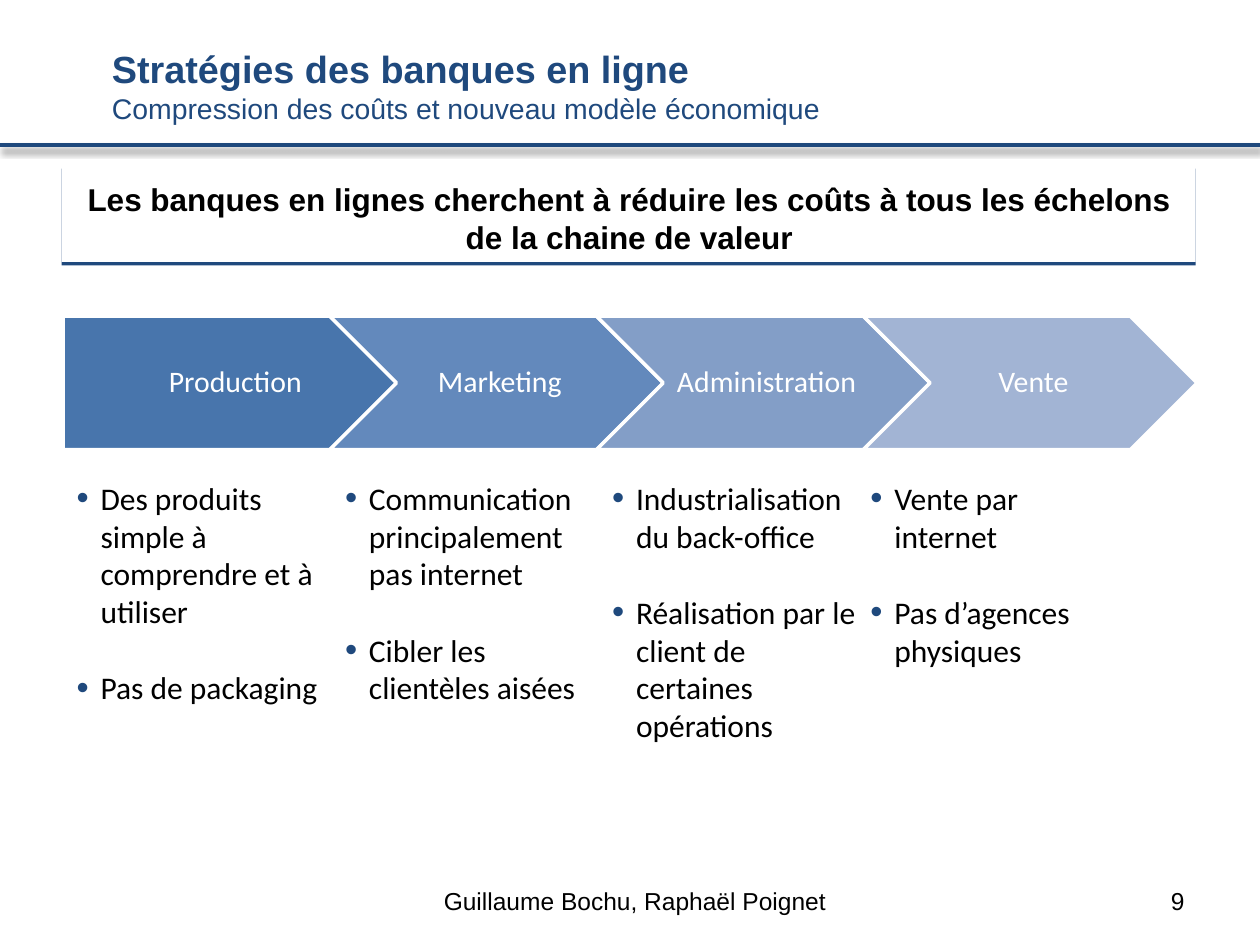
from dataclasses import dataclass

from lxml.etree import SubElement
from pptx import Presentation
from pptx.dml.color import RGBColor
from pptx.enum.shapes import MSO_CONNECTOR, MSO_SHAPE
from pptx.enum.text import MSO_ANCHOR, PP_ALIGN
from pptx.oxml.ns import qn
from pptx.util import Inches, Pt

NAVY = RGBColor(0x1F, 0x49, 0x7D)
BLACK = RGBColor(0x00, 0x00, 0x00)
WHITE = RGBColor(0xFF, 0xFF, 0xFF)
STEP_LEFT, STEP_PITCH = 0.5, 2.117


@dataclass(frozen=True)
class Step:
    name: str
    color: RGBColor
    list_left: float
    points: tuple[str, ...]


STEPS = (
    Step("Production", RGBColor(0x48, 0x75, 0xAC), 0.51,
         ("Des produits simple à comprendre et à utiliser", "Pas de packaging")),
    Step("Marketing", RGBColor(0x63, 0x89, 0xBC), 2.64,
         ("Communication principalement pas internet", "Cibler les clientèles aisées")),
    Step("Administration", RGBColor(0x83, 0x9E, 0xC7), 4.76,
         ("Industrialisation du back-office",
          "Réalisation par le client de certaines opérations")),
    Step("Vente", RGBColor(0xA2, 0xB4, 0xD4), 6.81,
         ("Vente par internet", "Pas d’agences physiques")),
)


def write_text(text_frame, text: str, *, size: float, font: str = "Arial",
               color: RGBColor = BLACK, bold: bool = False, align=PP_ALIGN.LEFT,
               margin: float = 0, space_before: float = 0, line_spacing: float = 1.0,
               bullet: bool = False) -> None:
    paragraph = text_frame.paragraphs[0]
    if paragraph.runs:
        paragraph = text_frame.add_paragraph()
    paragraph.alignment = align
    paragraph.space_before = Pt(space_before)
    paragraph.line_spacing = line_spacing
    properties = paragraph._p.get_or_add_pPr()
    properties.set("marL", str(Inches(margin)))
    properties.set("indent", str(Inches(-margin if bullet else 0)))
    if bullet:
        bullet_color = SubElement(properties, qn("a:buClr"))
        SubElement(bullet_color, qn("a:srgbClr"), val=str(NAVY))
        SubElement(properties, qn("a:buSzPct"), val="110000")
        SubElement(properties, qn("a:buFont"), typeface="Arial")
        SubElement(properties, qn("a:buChar"), char="•")
    run = paragraph.add_run()
    run.text = text
    run.font.name = font
    run.font.size = Pt(size)
    run.font.bold = bold
    run.font.color.rgb = color


def add_text_box(slide, left: float, top: float, width: float, height: float,
                 anchor=MSO_ANCHOR.MIDDLE):
    box = slide.shapes.add_textbox(Inches(left), Inches(top), Inches(width), Inches(height))
    box.text_frame.word_wrap = True
    box.text_frame.vertical_anchor = anchor
    return box.text_frame


def add_shadow(shape, color: RGBColor, opacity: int, blur: float, distance: float) -> None:
    shape_properties = shape._element.spPr
    effects = shape_properties.find(qn("a:effectLst"))
    if effects is None:
        effects = SubElement(shape_properties, qn("a:effectLst"))
    shadow = SubElement(effects, qn("a:outerShdw"), blurRad=str(Pt(blur)),
                        dist=str(Pt(distance)), dir="5400000", rotWithShape="0")
    shadow_color = SubElement(shadow, qn("a:srgbClr"), val=str(color))
    SubElement(shadow_color, qn("a:alpha"), val=str(opacity * 1000))


def add_header(slide) -> None:
    rule = slide.shapes.add_connector(
        MSO_CONNECTOR.STRAIGHT, Inches(0), Inches(1.15), Inches(10), Inches(1.15))
    rule.line.color.rgb = NAVY
    rule.line.width = Pt(2)
    add_shadow(rule, BLACK, 40, 4, 3)
    title = add_text_box(slide, 0.5, 0.29, 9, 0.77)
    write_text(title, "Stratégies des banques en ligne", size=21.6, color=NAVY,
               bold=True, margin=0.29)
    write_text(title, "Compression des coûts et nouveau modèle économique", size=16.2,
               color=NAVY, margin=0.29)


def add_key_message(slide) -> None:
    banner = slide.shapes.add_shape(
        MSO_SHAPE.RECTANGLE, Inches(0.49), Inches(1.31), Inches(9), Inches(0.77))
    banner.fill.solid()
    banner.fill.fore_color.rgb = WHITE
    banner.line.fill.background()
    banner.shadow.inherit = False
    add_shadow(banner, NAVY, 100, 0, 2)
    banner.text_frame.word_wrap = True
    banner.text_frame.vertical_anchor = MSO_ANCHOR.BOTTOM
    write_text(banner.text_frame,
               "Les banques en lignes cherchent à réduire les coûts à tous les échelons "
               "de la chaine de valeur",
               size=18, bold=True, align=PP_ALIGN.CENTER, margin=0.01)


def add_step(slide, index: int, step: Step) -> None:
    is_first = index == 0
    arrow = slide.shapes.add_shape(
        MSO_SHAPE.PENTAGON if is_first else MSO_SHAPE.CHEVRON,
        Inches(STEP_LEFT + index * STEP_PITCH), Inches(2.51), Inches(2.65), Inches(1.06))
    arrow.fill.solid()
    arrow.fill.fore_color.rgb = step.color
    arrow.line.color.rgb = WHITE
    arrow.line.width = Pt(2)
    arrow.shadow.inherit = False
    label = arrow.text_frame
    label.word_wrap = True
    label.vertical_anchor = MSO_ANCHOR.MIDDLE
    label.margin_left = Inches(0.37 if is_first else 0.07)
    label.margin_right = Inches(0.02)
    write_text(label, step.name, size=17, font="Calibri", color=WHITE,
               align=PP_ALIGN.CENTER, line_spacing=0.9)


def add_points(slide, step: Step) -> None:
    points = add_text_box(slide, step.list_left, 3.75, 2.13, 1.92, MSO_ANCHOR.TOP)
    for index, point in enumerate(step.points):
        write_text(points, point, size=18, font="Calibri", margin=0.19,
                   space_before=22 if index else 0, bullet=True)


def add_footer(slide) -> None:
    authors = add_text_box(slide, 3.42, 6.95, 3.24, 0.4)
    write_text(authors, "Guillaume Bochu, Raphaël Poignet", size=14, align=PP_ALIGN.CENTER)
    number = add_text_box(slide, 7.17, 6.95, 2.33, 0.4)
    write_text(number, "9", size=14, align=PP_ALIGN.RIGHT)


def main() -> None:
    presentation = Presentation()
    presentation.slide_width = Inches(10)
    presentation.slide_height = Inches(7.5)
    slide = presentation.slides.add_slide(presentation.slide_layouts[6])
    add_header(slide)
    for index, step in enumerate(STEPS):
        add_step(slide, index, step)
    add_footer(slide)
    add_key_message(slide)
    for step in STEPS:
        add_points(slide, step)
    presentation.save("out.pptx")


if __name__ == "__main__":
    main()
